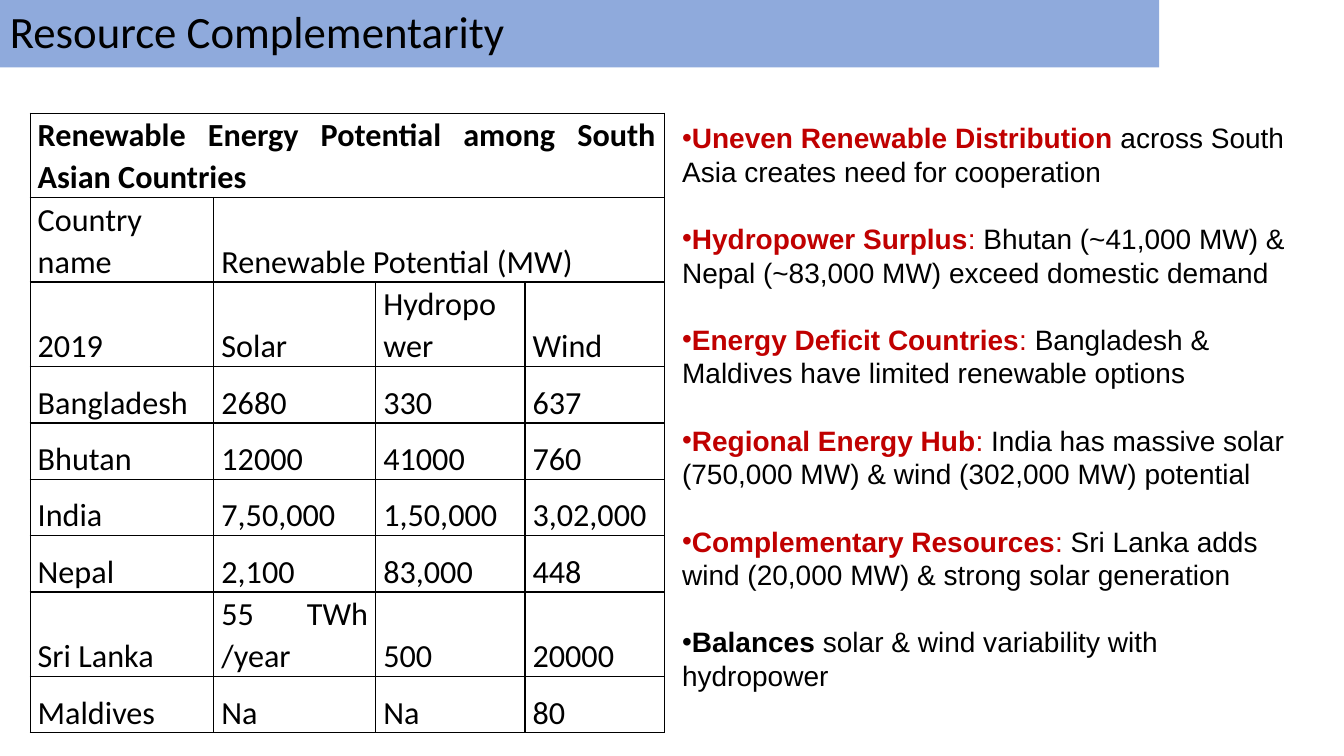
from dataclasses import dataclass

from lxml.etree import SubElement
from pptx import Presentation
from pptx.dml.color import RGBColor
from pptx.enum.shapes import MSO_SHAPE
from pptx.enum.text import MSO_ANCHOR, PP_ALIGN
from pptx.oxml.ns import qn
from pptx.util import Cm, Pt


@dataclass(frozen=True)
class Theme:
    black: RGBColor = RGBColor(0x00, 0x00, 0x00)
    red: RGBColor = RGBColor(0xC0, 0x00, 0x00)
    banner: RGBColor = RGBColor(0x8F, 0xAA, 0xDC)
    title_size: Pt = Pt(32)
    table_size: Pt = Pt(23)
    body_size: Pt = Pt(20)
    body_pitch: Pt = Pt(24)


theme = Theme()


def apply_format(target, values):
    for name, value in values.items():
        setattr(target, name, value)


def add_span(para, text, color, **font_values):
    span = para.add_run()
    span.text = text
    apply_format(span.font, font_values)
    span.font.color.rgb = color


deck = Presentation()
deck.slide_width, deck.slide_height = Cm(33.87), Cm(19.05)
page = deck.slides.add_slide(deck.slide_layouts[6])

# Title banner
banner = page.shapes.add_shape(MSO_SHAPE.RECTANGLE, 0, 0, Cm(29.21), Cm(1.7))
banner.shadow.inherit = False
banner.fill.solid()
banner.fill.fore_color.rgb = theme.banner
banner.line.fill.background()
banner.text_frame.vertical_anchor = MSO_ANCHOR.MIDDLE
para = banner.text_frame.paragraphs[0]
apply_format(para, {"alignment": PP_ALIGN.LEFT, "line_spacing": 0.9})
add_span(para, "Resource Complementarity", theme.black, name="Calibri", size=theme.title_size)

# Table of renewable potential
rows = [
    ["Renewable Energy Potential among South Asian Countries"],
    ["Country name", "Renewable Potential (MW)"],
    ["2019", "Solar", "Hydropower", "Wind"],
    ["Bangladesh", "2680", "330", "637"],
    ["Bhutan", "12000", "41000", "760"],
    ["India", "7,50,000", "1,50,000", "3,02,000"],
    ["Nepal", "2,100", "83,000", "448"],
    ["Sri Lanka", "55 TWh /year", "500", "20000"],
    ["Maldives", "Na", "Na", "80"],
]
column_widths = [Cm(4.63), Cm(4.08), Cm(3.76), Cm(3.51)]
row_height = Cm(1.42)
table = page.shapes.add_table(
    len(rows), len(column_widths), Cm(0.76), Cm(2.85),
    sum(column_widths), row_height * len(rows),
).table
apply_format(table, {"first_row": False, "horz_banding": False})
for column, width in zip(table.columns, column_widths):
    column.width = width
for row in table.rows:
    row.height = row_height

cell_format = {
    "margin_left": Cm(0.19), "margin_right": Cm(0.19),
    "margin_top": 0, "margin_bottom": 0,
    "vertical_anchor": MSO_ANCHOR.BOTTOM,
}
cell_para_format = {
    "alignment": PP_ALIGN.JUSTIFY, "line_spacing": 1.07, "space_after": Pt(8),
}
for cell in table.iter_cells():
    apply_format(cell, cell_format)
    properties = cell._tc.get_or_add_tcPr()
    for side in ("a:lnL", "a:lnR", "a:lnT", "a:lnB"):
        border = SubElement(properties, qn(side), w=str(Pt(1)))
        fill = SubElement(border, qn("a:solidFill"))
        SubElement(fill, qn("a:srgbClr"), val=str(theme.black))
    cell.fill.background()

table.cell(0, 0).merge(table.cell(0, 3))
table.cell(1, 1).merge(table.cell(1, 3))
for row_index, texts in enumerate(rows):
    for column_index, text in enumerate(texts):
        para = table.cell(row_index, column_index).text_frame.paragraphs[0]
        apply_format(para, cell_para_format)
        add_span(para, text, theme.black, name="Calibri",
                 size=theme.table_size, bold=row_index == 0)

# Key points: lead words, colon, explanation, lead colour
points = [
    ("Uneven Renewable Distribution", "",
     " across South Asia creates need for cooperation", theme.red),
    ("Hydropower Surplus", ":",
     " Bhutan (~41,000 MW) & Nepal (~83,000 MW) exceed domestic demand", theme.red),
    ("Energy Deficit Countries", ":",
     " Bangladesh & Maldives have limited renewable options", theme.red),
    ("Regional Energy Hub", ":",
     " India has massive solar (750,000 MW) & wind (302,000 MW) potential", theme.red),
    ("Complementary Resources", ":",
     " Sri Lanka adds wind (20,000 MW) & strong solar generation", theme.red),
    ("Balances", "", " solar & wind variability with hydropower", theme.black),
]
box = page.shapes.add_textbox(Cm(16.94), Cm(2.85), Cm(16.15), Cm(14.78))
frame = box.text_frame
apply_format(frame, {"word_wrap": True, "vertical_anchor": MSO_ANCHOR.MIDDLE})
body_font = {"name": "Arial", "size": theme.body_size}
for index, (lead, colon, explanation, lead_color) in enumerate(points):
    para = frame.add_paragraph() if index else frame.paragraphs[0]
    para.line_spacing = theme.body_pitch
    para.space_before = theme.body_pitch if index else Pt(0)
    properties = para._p.get_or_add_pPr()
    SubElement(properties, qn("a:buFont"), typeface="Arial")
    SubElement(properties, qn("a:buChar"), char="•")
    add_span(para, lead, lead_color, bold=True, **body_font)
    if colon:
        add_span(para, colon, lead_color, bold=False, **body_font)
    add_span(para, explanation, theme.black, bold=False, **body_font)

deck.save("out.pptx")
